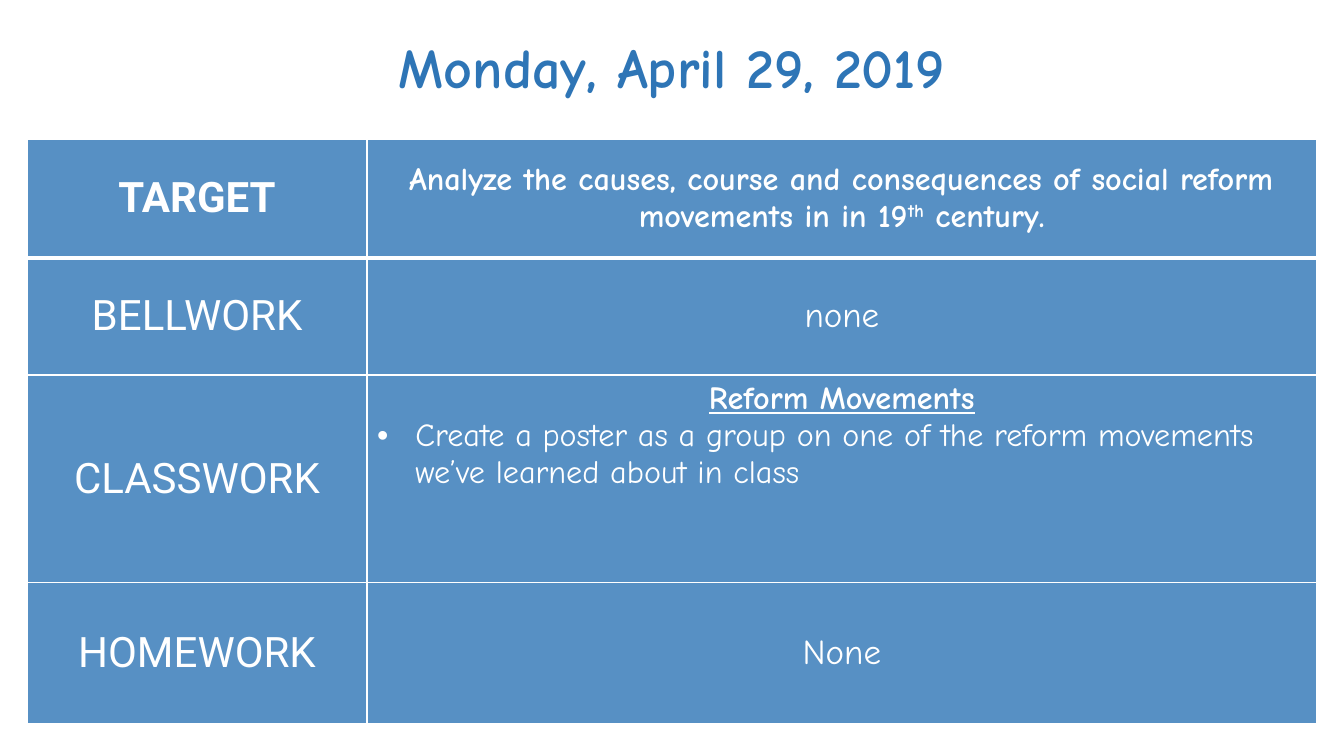
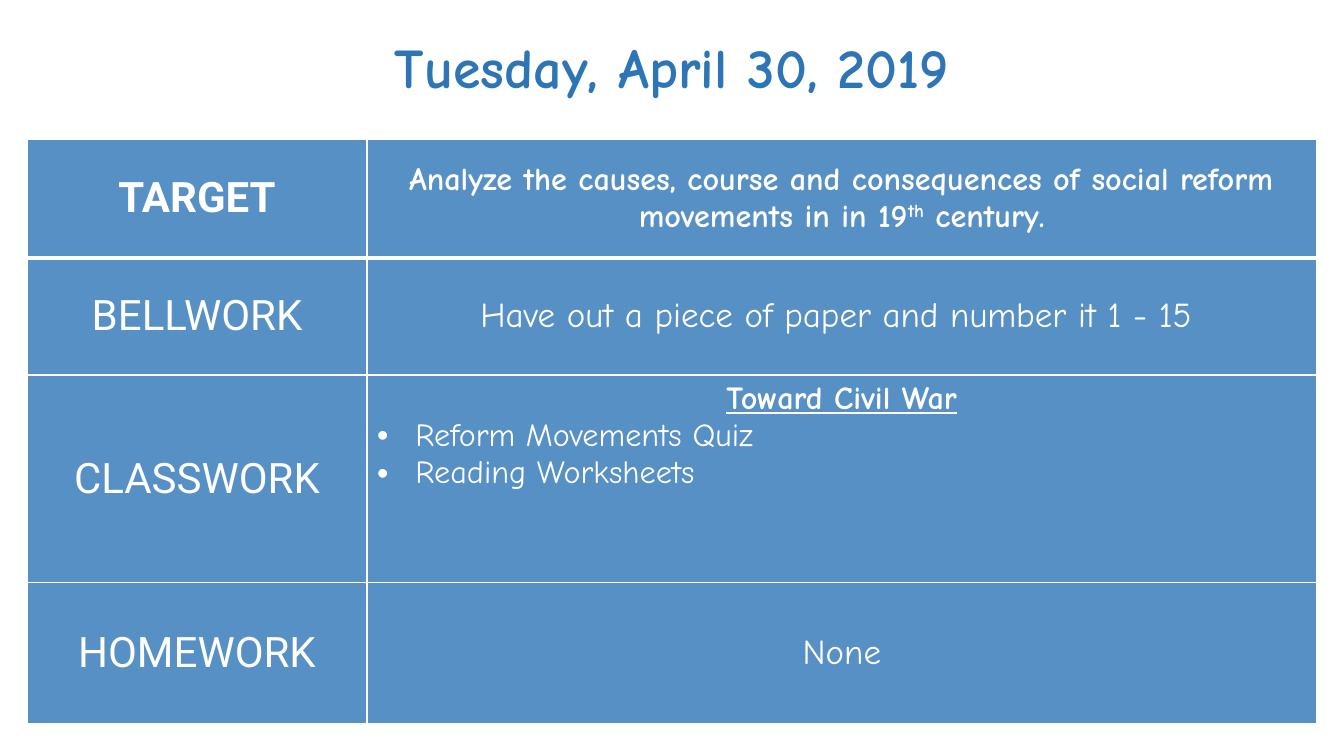
import pptx
import pptx.dml.color
import pptx.enum.shapes
import pptx.enum.text
import pptx.oxml.ns
import pptx.util
from pptx.util import Inches

CENTER = pptx.enum.text.PP_ALIGN.CENTER
LEFT = pptx.enum.text.PP_ALIGN.LEFT
MIDDLE = pptx.enum.text.MSO_ANCHOR.MIDDLE
TOP = pptx.enum.text.MSO_ANCHOR.TOP
qn = pptx.oxml.ns.qn


def color(hex_string):
    return pptx.dml.color.RGBColor.from_string(hex_string)


def fill_solid(fill, properties, hex_string, opacity):
    """Fill with a colour at the given opacity in percent."""
    fill.solid()
    fill.fore_color.rgb = color(hex_string)
    rgb = properties.find(qn("a:solidFill")).find(qn("a:srgbClr"))
    alpha = rgb.makeelement(qn("a:alpha"), {"val": str(opacity * 1000)})
    rgb.append(alpha)


class Agenda:
    BLUE = "2E75B6"
    WHITE = "FFFFFF"
    BODY_FONT = "Comic Neue"
    LABEL_FONT = "Roboto"
    MARGIN = 0.27
    WIDTH = 12.79
    COLUMNS = (3.37, 9.42)
    ROWS = (1.18, 1.16, 2.06, 1.4)
    INDENT = 0.38

    def __init__(self):
        self.presentation = pptx.Presentation()
        self.presentation.slide_width = Inches(13.33)
        self.presentation.slide_height = Inches(7.5)
        self.slide = None

    def add_slide(self):
        layout = self.presentation.slide_layouts[6]
        self.slide = self.presentation.slides.add_slide(layout)

    def run(self, paragraph, text, size, font=BODY_FONT, fill=WHITE,
            bold=False, underline=False, superscript=False):
        run = paragraph.add_run()
        run.text = text
        run.font.name = font
        run.font.size = pptx.util.Pt(size)
        run.font.bold = bold
        run.font.underline = underline
        run.font.color.rgb = color(fill)
        if superscript:
            run.font._element.set("baseline", "30000")

    def title(self, text):
        shape = self.slide.shapes.add_shape(
            pptx.enum.shapes.MSO_SHAPE.RECTANGLE, Inches(self.MARGIN),
            Inches(0.16), Inches(self.WIDTH), Inches(1))
        shape.shadow.inherit = False
        shape.line.fill.background()
        fill_solid(shape.fill, shape._element.spPr, self.WHITE, 65)
        shape.text_frame.word_wrap = True
        shape.text_frame.vertical_anchor = MIDDLE
        paragraph = shape.text_frame.paragraphs[0]
        paragraph.alignment = CENTER
        self.run(paragraph, text, 40, fill=self.BLUE, bold=True)

    def borders(self, cell, top, bottom):
        """Draw white cell edges; top and bottom are widths in points."""
        properties = cell._tc.get_or_add_tcPr()
        edges = (("L", 1), ("R", 1), ("T", top), ("B", bottom))
        for index, (side, width) in enumerate(edges):
            line = properties.makeelement(
                qn(f"a:ln{side}"), {"w": str(pptx.util.Pt(width))})
            solid = line.makeelement(qn("a:solidFill"), {})
            solid.append(solid.makeelement(qn("a:srgbClr"), {"val": self.WHITE}))
            line.append(solid)
            properties.insert(index, line)

    def table(self):
        table = self.slide.shapes.add_table(
            len(self.ROWS), len(self.COLUMNS), Inches(self.MARGIN),
            Inches(1.38), Inches(self.WIDTH), Inches(sum(self.ROWS))).table
        table.horz_banding = False
        for column, width in zip(table.columns, self.COLUMNS):
            column.width = Inches(width)
        for index, (row, height) in enumerate(zip(table.rows, self.ROWS)):
            row.height = Inches(height)
            for cell in row.cells:
                fill_solid(cell.fill, cell._tc.get_or_add_tcPr(), self.BLUE, 80)
                self.borders(cell, top=3 if index == 1 else 1,
                             bottom=3 if index == 0 else 1)
                cell.vertical_anchor = MIDDLE
                cell.text_frame.paragraphs[0].alignment = CENTER
        return table

    def bullet(self, text_frame, text):
        paragraph = text_frame.add_paragraph()
        paragraph.alignment = LEFT
        properties = paragraph._p.get_or_add_pPr()
        properties.set("marL", str(Inches(self.INDENT)))
        properties.set("indent", str(-Inches(self.INDENT)))
        for tag, attributes in (("a:buFont", {"typeface": "Arial"}),
                                ("a:buChar", {"char": "•"})):
            properties.append(properties.makeelement(qn(tag), attributes))
        self.run(paragraph, text, 23)

    def day(self, date, bellwork, topic, activities, homework):
        self.add_slide()
        table = self.table()
        labels = ("TARGET", "BELLWORK", "CLASSWORK", "HOMEWORK")
        for index, label in enumerate(labels):
            paragraph = table.cell(index, 0).text_frame.paragraphs[0]
            self.run(paragraph, label, 30, self.LABEL_FONT, bold=index == 0)

        target, bell, classwork, home = (
            table.cell(index, 1) for index in range(len(labels)))
        paragraph = target.text_frame.paragraphs[0]
        self.run(paragraph, "Analyze the causes, course and consequences of "
                 "social reform movements in in 19", 23, bold=True)
        self.run(paragraph, "th", 23, bold=True, superscript=True)
        self.run(paragraph, " century.", 23, bold=True)
        self.run(bell.text_frame.paragraphs[0], bellwork, 25)
        self.run(home.text_frame.paragraphs[0], homework, 25)

        classwork.vertical_anchor = TOP
        self.run(classwork.text_frame.paragraphs[0], topic, 23,
                 bold=True, underline=True)
        for activity in activities:
            self.bullet(classwork.text_frame, activity)
        self.title(date)


def main():
    agenda = Agenda()
    agenda.day("Monday, April 29, 2019", "none", "Reform Movements",
               ["Create a poster as a group on one of the reform movements "
                "we’ve learned about in class"], "None")
    agenda.day("Tuesday, April 30, 2019",
               "Have out a piece of paper and number it 1 - 15 ",
               "Toward Civil War",
               ["Reform Movements Quiz", "Reading Worksheets"], "None")
    agenda.presentation.save("out.pptx")


if __name__ == "__main__":
    main()
